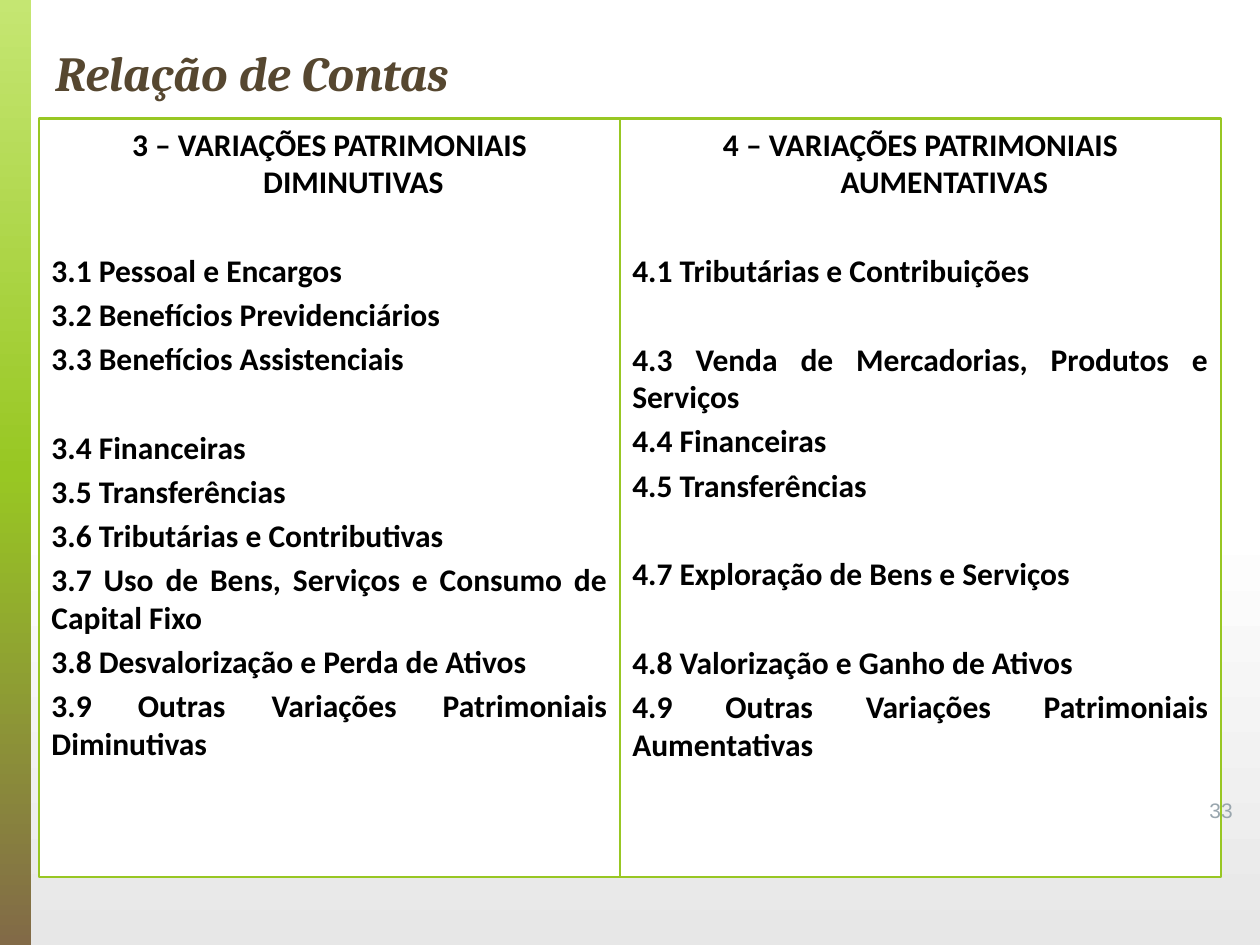
"""Build the slide that lists the decreasing and increasing equity variation accounts."""
from copy import deepcopy
from dataclasses import dataclass

from pptx import Presentation
from pptx.dml.color import RGBColor
from pptx.enum.shapes import MSO_SHAPE
from pptx.enum.text import MSO_ANCHOR, PP_ALIGN
from pptx.oxml.ns import qn
from pptx.util import Inches, Pt


@dataclass(frozen=True)
class Theme:
    green: str = "98C723"
    brown: str = "564730"
    grey: str = "99A6AE"
    black: str = "000000"
    white: str = "FFFFFF"
    page_stops: tuple = ((0, "FFFFFF"), (55, "FFFFFF"), (100, "E7E7E7"))
    band_stops: tuple = ((0, "C5E672"), (50, "98C723"), (100, "826A47"))
    title_size: int = 28
    body_size: int = 18
    number_size: int = 12
    space: float = 3.6
    blank_line: float = 25.4


@dataclass(frozen=True)
class Account:
    text: str
    gap: bool = False


@dataclass(frozen=True)
class Panel:
    left: float
    width: float
    heading: str
    accounts: tuple[Account, ...]


THEME = Theme()
PANELS = (
    Panel(0.31, 4.61, "3 – VARIAÇÕES PATRIMONIAIS DIMINUTIVAS", (
        Account("3.1 Pessoal e Encargos", gap=True),
        Account("3.2 Benefícios Previdenciários"),
        Account("3.3 Benefícios Assistenciais"),
        Account("3.4 Financeiras", gap=True),
        Account("3.5 Transferências"),
        Account("3.6 Tributárias e Contributivas"),
        Account("3.7 Uso de Bens, Serviços e Consumo de Capital Fixo"),
        Account("3.8 Desvalorização e Perda de Ativos"),
        Account("3.9 Outras Variações Patrimoniais Diminutivas"),
    )),
    Panel(4.92, 4.77, "4 – VARIAÇÕES PATRIMONIAIS AUMENTATIVAS", (
        Account("4.1 Tributárias e Contribuições", gap=True),
        Account("4.3 Venda de Mercadorias, Produtos e Serviços", gap=True),
        Account("4.4 Financeiras"),
        Account("4.5 Transferências"),
        Account("4.7 Exploração de Bens e Serviços", gap=True),
        Account("4.8 Valorização e Ganho de Ativos", gap=True),
        Account("4.9 Outras Variações Patrimoniais Aumentativas"),
    )),
)


def set_gradient(fill, element, stops: tuple) -> None:
    fill.gradient()
    grad = element.find(".//" + qn("a:gradFill"))
    gs_lst = grad.find(qn("a:gsLst"))
    model = deepcopy(gs_lst[0])
    for gs in list(gs_lst):
        gs_lst.remove(gs)
    for _ in stops:
        gs_lst.append(deepcopy(model))
    for stop, (position, color) in zip(fill.gradient_stops, stops):
        stop.position = position / 100
        stop.color.rgb = RGBColor.from_string(color)
    grad.find(qn("a:lin")).set("ang", "5400000")


def add_rect(s, left: float, top: float, width: float, height: float):
    sp = s.shapes.add_shape(MSO_SHAPE.RECTANGLE, Inches(left), Inches(top),
                            Inches(width), Inches(height))
    sp.shadow.inherit = False
    return sp


def write(p, text: str, *, size: float, color: str, font: str = "Calibri", bold: bool = False,
          italic: bool = False, align=PP_ALIGN.LEFT, before: float = 0) -> None:
    p.alignment = align
    p.space_before = Pt(before)
    r = p.add_run()
    r.text = text
    r.font.name = font
    r.font.size = Pt(size)
    r.font.bold = bold
    r.font.italic = italic
    r.font.color.rgb = RGBColor.from_string(color)


def add_label(s, left: float, top: float, width: float, height: float, text: str,
              **style) -> None:
    tf = s.shapes.add_textbox(Inches(left), Inches(top), Inches(width), Inches(height)).text_frame
    tf.word_wrap = True
    write(tf.paragraphs[0], text, **style)


def add_panel(s, panel: Panel) -> None:
    sp = add_rect(s, panel.left, 0.94, panel.width, 6.02)
    sp.fill.solid()
    sp.fill.fore_color.rgb = RGBColor.from_string(THEME.white)
    sp.line.color.rgb = RGBColor.from_string(THEME.green)
    sp.line.width = Pt(1.25)
    tf = sp.text_frame
    tf.word_wrap = True
    tf.vertical_anchor = MSO_ANCHOR.TOP
    style = {"size": THEME.body_size, "color": THEME.black, "bold": True}
    p = tf.paragraphs[0]
    write(p, panel.heading, align=PP_ALIGN.CENTER, **style)
    pPr = p._p.get_or_add_pPr()
    pPr.set("marL", str(Inches(0.38)))
    pPr.set("indent", str(Inches(-0.38)))
    for account in panel.accounts:
        before = THEME.space + (THEME.blank_line if account.gap else 0)
        write(tf.add_paragraph(), account.text, align=PP_ALIGN.JUSTIFY, before=before, **style)


def main() -> None:
    prs = Presentation()
    prs.slide_width, prs.slide_height = Inches(10), Inches(7.5)
    s = prs.slides.add_slide(prs.slide_layouts[6])
    set_gradient(s.background.fill, s.element, THEME.page_stops)
    band = add_rect(s, 0, 0, 0.25, 7.5)
    set_gradient(band.fill, band.element, THEME.band_stops)
    band.line.fill.background()
    for panel in PANELS:
        add_panel(s, panel)
    add_label(s, 9.5, 6.28, 0.42, 0.4, "33", size=THEME.number_size, color=THEME.grey,
              font="Arial")
    add_label(s, 0.34, 0.29, 9.22, 0.57, "Relação de Contas", size=THEME.title_size,
              color=THEME.brown, font="Cambria", bold=True, italic=True)
    prs.save("out.pptx")


if __name__ == "__main__":
    main()
